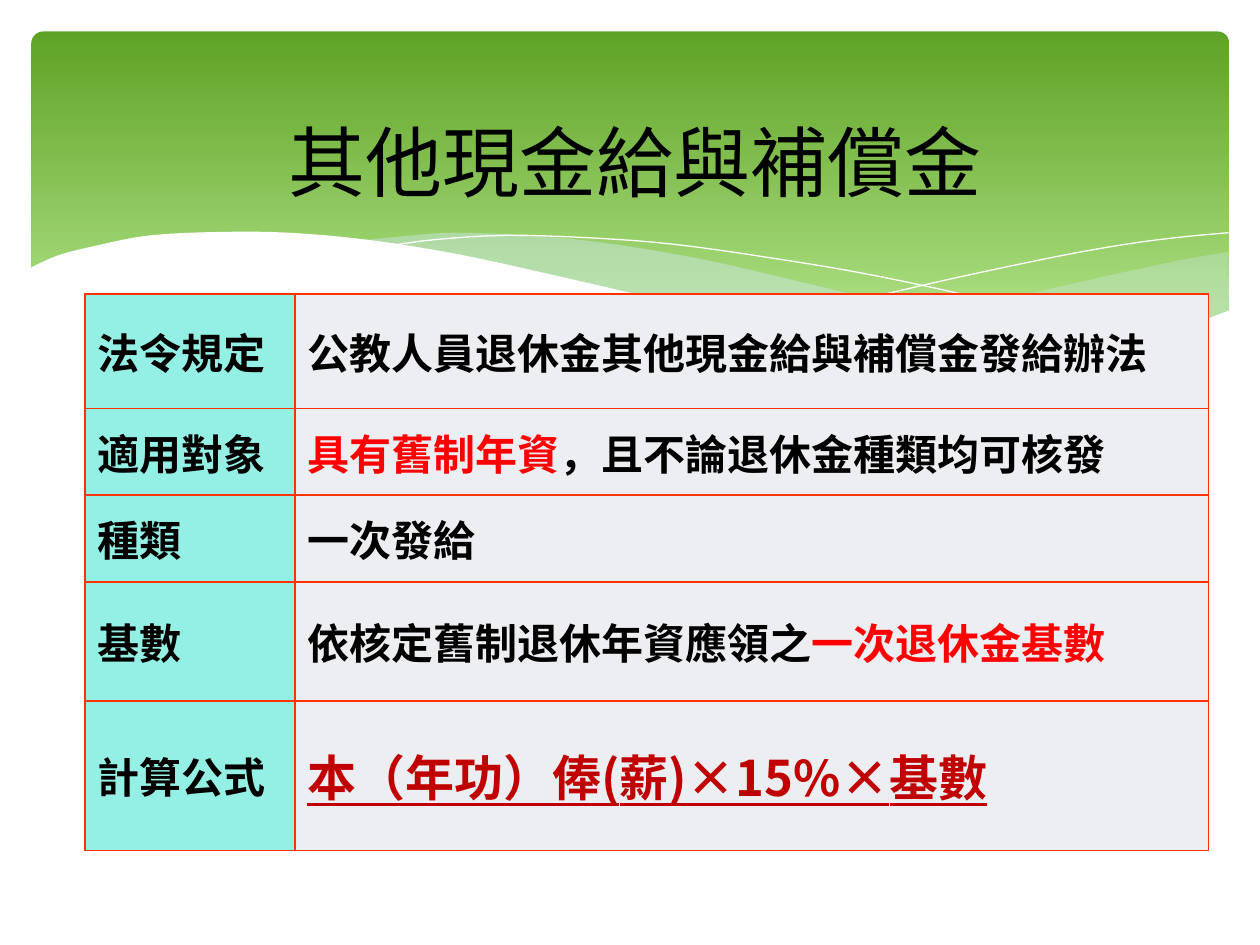
from dataclasses import dataclass

from lxml.etree import SubElement
from pptx import Presentation
from pptx.dml.color import RGBColor
from pptx.enum.shapes import MSO_SHAPE
from pptx.enum.text import MSO_ANCHOR, PP_ALIGN
from pptx.oxml import parse_xml
from pptx.oxml.ns import nsdecls, qn
from pptx.util import Pt


@dataclass(frozen=True)
class Theme:
    black: str = "000000"
    white: str = "FFFFFF"
    red: str = "FF0000"
    dark_red: str = "C00000"
    border: str = "FF3300"
    label_fill: str = "94F0E4"
    value_fill: str = "ECEEF2"
    banner_top: str = "5FA326"
    banner_bottom: str = "B2E389"
    wave: str = "D6ECFF"
    label_font: str = "Noto Sans CJK SC"
    value_font: str = "Noto Sans CJK JP"
    title_size: int = 44
    body_size: int = 24
    formula_size: int = 28


THEME = Theme()

RIGHT_WAVE_TOP = [(702, 144), (673, 149), (620, 160.5), (561, 174), (508, 185), (476, 191)]
RIGHT_WAVE_BOTTOM = [(476, 191), (508, 195), (545, 198.5), (586, 200), (621, 198),
                     (652, 193.5), (678, 186.5), (702.5, 178)]
BAND_TOP = [(643, 196.5), (602.5, 191), (558, 183), (508, 173), (453, 160), (410, 150),
            (370, 142.5), (335, 137.5), (302, 134.5), (260, 133), (236, 134.5), (206, 137.5)]
BAND_BOTTOM = [(206, 137.5), (246, 143), (291, 152), (323, 160), (381.5, 173), (433, 183.5),
               (479, 191.5), (520, 197), (565, 200), (603, 200), (643, 196.5)]
LONG_LINE = [(222.5, 140.5), (248, 137), (289, 134.5), (338, 136), (384, 139.5),
             (438, 147), (500, 157.5), (572, 173.5), (653, 196)]
RISING_LINE = [(441, 185), (484, 173.5), (538.5, 160.5), (602, 147), (644, 139.5),
               (675, 135.5), (702, 133)]
WHITE_EDGE = [(703.5, 177), (677, 186.5), (647, 193.5), (612, 198), (582.5, 199.5),
              (536, 197), (481, 191), (434, 183), (381, 172), (322, 158.5), (263, 145.5),
              (210, 137), (165.5, 133), (127.5, 132.5), (85.5, 134.5), (54.5, 140.5),
              (33, 146), (16.5, 153.5)]

ROWS = [
    (65.5, "法令規定", [("公教人員退休金其他現金給與補償金發給辦法", THEME.black)]),
    (49.5, "適用對象", [("具有舊制年資", THEME.red), ("，且不論退休金種類均可核發", THEME.black)]),
    (49.5, "種類", [("一次發給", THEME.black)]),
    (68, "基數", [("依核定舊制退休年資應領之", THEME.black), ("一次退休金基數", THEME.red)]),
    (85.5, "計算公式", [("本（年功）俸(薪)×15%×基數", THEME.dark_red)]),
]


def color(value):
    return RGBColor.from_string(value)


def smooth(knots, steps=4):
    padded = [knots[0], *knots, knots[-1]]
    points = [knots[0]]
    for before, start, end, after in zip(padded, padded[1:], padded[2:], padded[3:]):
        for step in range(1, steps + 1):
            t = step / steps
            points.append(tuple(
                0.5 * (2 * b + (c - a) * t + (2 * a - 5 * b + 4 * c - d) * t ** 2
                       + (3 * b - a - 3 * c + d) * t ** 3)
                for a, b, c, d in zip(before, start, end, after)))
    return points


def add_outline(slide, points, closed):
    positions = [(Pt(x), Pt(y)) for x, y in points]
    builder = slide.shapes.build_freeform(*positions[0])
    builder.add_line_segments(positions[1:], close=closed)
    shape = builder.convert_to_shape()
    shape.shadow.inherit = False
    return shape


def add_wave(slide, points, fill, opacity=100):
    shape = add_outline(slide, points, True)
    shape.fill.solid()
    shape.fill.fore_color.rgb = color(fill)
    shape.line.fill.background()
    if opacity < 100:
        color_element = shape._element.spPr.find(".//" + qn("a:srgbClr"))
        SubElement(color_element, qn("a:alpha"), val=str(opacity * 1000))


def add_curve(slide, knots):
    shape = add_outline(slide, smooth(knots), False)
    shape.fill.background()
    shape.line.color.rgb = color(THEME.white)
    shape.line.width = Pt(0)


def add_banner(slide):
    shape = slide.shapes.add_shape(MSO_SHAPE.ROUNDED_RECTANGLE, Pt(18), Pt(18), Pt(684.5), Pt(194.5))
    shape.adjustments[0] = 0.034
    shape.shadow.inherit = False
    shape.line.fill.background()
    shape.fill.gradient()
    shape.fill.gradient_angle = 270
    stops = [(0, THEME.banner_top), (0.9, THEME.banner_bottom)]
    for stop, (position, value) in zip(shape.fill.gradient_stops, stops):
        stop.position = position
        stop.color.rgb = color(value)


def format_run(run, font_name, size, value, bold=False):
    run.font.name = font_name
    run.font.size = Pt(size)
    run.font.bold = bold
    run.font.color.rgb = color(value)
    SubElement(run._r.get_or_add_rPr(), qn("a:ea"), typeface=font_name)


def add_title(slide, text):
    box = slide.shapes.add_textbox(Pt(42.5), Pt(60.5), Pt(641), Pt(62.5))
    frame = box.text_frame
    frame.word_wrap = True
    frame.vertical_anchor = MSO_ANCHOR.MIDDLE
    frame.text = text
    paragraph = frame.paragraphs[0]
    paragraph.alignment = PP_ALIGN.CENTER
    run = paragraph.runs[0]
    format_run(run, THEME.label_font, THEME.title_size, THEME.black)
    shadow = parse_xml(
        f'<a:effectLst {nsdecls("a")}><a:outerShdw blurRad="38100" dist="38100" dir="2700000">'
        f'<a:srgbClr val="{THEME.black}"><a:alpha val="43000"/></a:srgbClr>'
        '</a:outerShdw></a:effectLst>')
    run.font._element.find(qn("a:solidFill")).addnext(shadow)


def style_cell(cell, fill):
    cell.vertical_anchor = MSO_ANCHOR.MIDDLE
    cell.fill.solid()
    cell.fill.fore_color.rgb = color(fill)
    properties = cell._tc.get_or_add_tcPr()
    for index, side in enumerate(("lnL", "lnR", "lnT", "lnB")):
        properties.insert(index, parse_xml(
            f'<a:{side} {nsdecls("a")} w="{Pt(1)}"><a:solidFill>'
            f'<a:srgbClr val="{THEME.border}"/></a:solidFill></a:{side}>'))


def add_rules_table(slide):
    heights = [height for height, _, _ in ROWS]
    frame = slide.shapes.add_table(len(ROWS), 2, Pt(48.5), Pt(168), Pt(642), Pt(sum(heights)))
    table = frame.table
    table.first_row = False
    table.horz_banding = False
    for column, width in zip(table.columns, (120, 522)):
        column.width = Pt(width)
    for row, (height, label, parts) in zip(table.rows, ROWS):
        row.height = Pt(height)
        label_cell, value_cell = row.cells
        style_cell(label_cell, THEME.label_fill)
        style_cell(value_cell, THEME.value_fill)
        label_cell.text_frame.text = label
        paragraph = label_cell.text_frame.paragraphs[0]
        paragraph.alignment = PP_ALIGN.JUSTIFY
        format_run(paragraph.runs[0], THEME.label_font, THEME.body_size, THEME.black, True)
        paragraph = value_cell.text_frame.paragraphs[0]
        for text, value in parts:
            run = paragraph.add_run()
            run.text = text
            is_formula = value == THEME.dark_red
            size = THEME.formula_size if is_formula else THEME.body_size
            format_run(run, THEME.value_font, size, value, True)
            run.font.underline = is_formula


def main():
    presentation = Presentation()
    presentation.slide_width, presentation.slide_height = Pt(720), Pt(540)
    slide = presentation.slides.add_slide(presentation.slide_layouts[6])
    add_banner(slide)
    add_wave(slide, smooth(RIGHT_WAVE_TOP) + smooth(RIGHT_WAVE_BOTTOM), THEME.wave, 29)
    add_wave(slide, smooth(BAND_TOP) + smooth(BAND_BOTTOM), THEME.wave, 40)
    add_curve(slide, LONG_LINE)
    add_curve(slide, RISING_LINE)
    add_wave(slide, smooth(WHITE_EDGE) + [(16.5, 237), (703.5, 237)], THEME.white)
    add_title(slide, "其他現金給與補償金")
    add_rules_table(slide)
    presentation.save("out.pptx")


if __name__ == "__main__":
    main()
